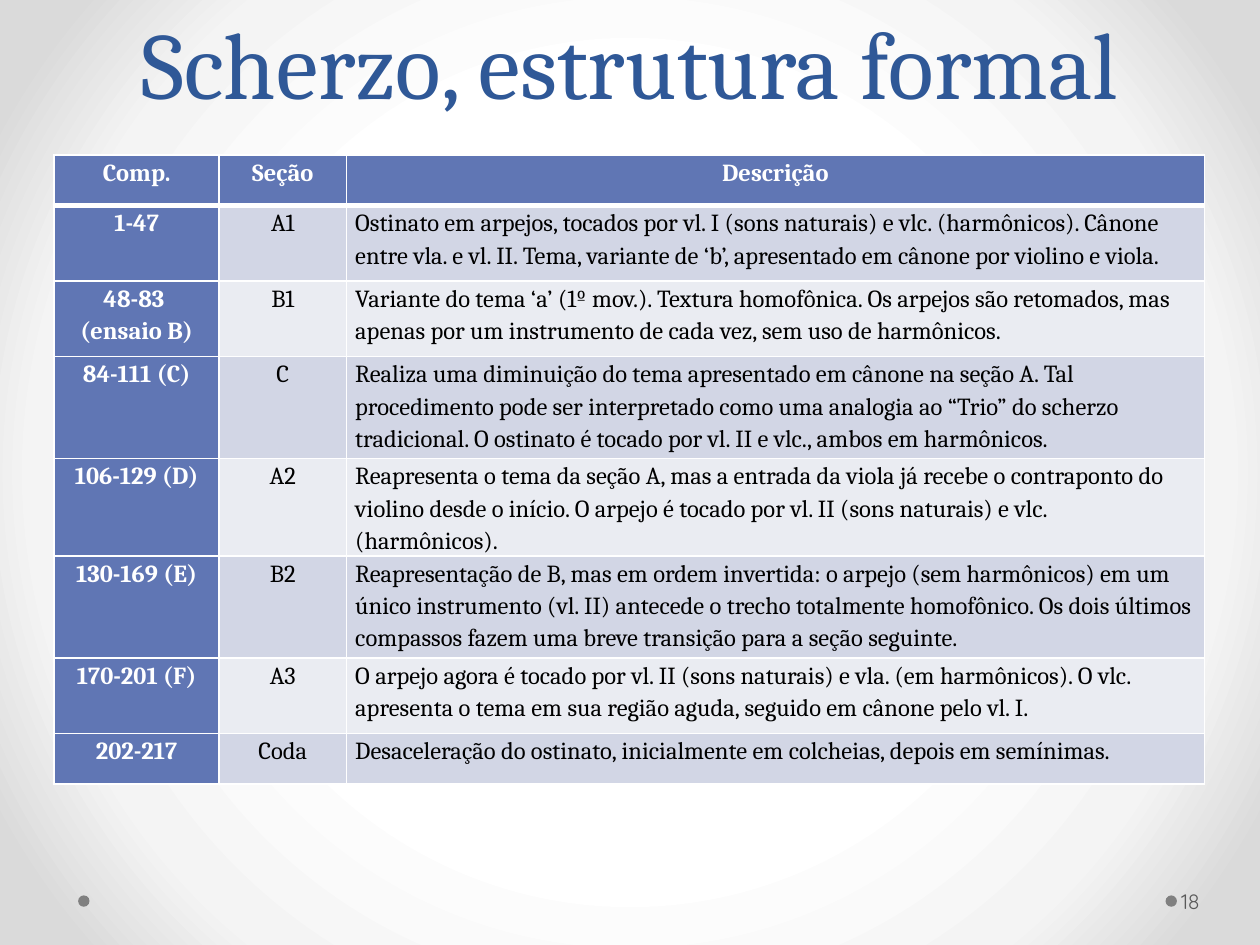
import pptx
import pptx.dml.color
import pptx.enum.shapes
import pptx.enum.text
import pptx.oxml
import pptx.oxml.ns
import pptx.util

WIDTH, HEIGHT = pptx.util.Inches(10), pptx.util.Inches(7.5)
FONT = "Cambria"
COLORS = {
    "title": "2F5897",
    "header": "6076B4",
    "odd_row": "D2D6E5",
    "even_row": "EAECF2",
    "white": "FFFFFF",
    "black": "000000",
    "dot": "808080",
    "number": "595959",
}
BACKGROUND_STOPS = [(50, "FFFFFF"), (76, "F4F4F4"), (92, "DADADA")]

# Regions as shares of the slide: left, top, width, height
TITLE_BOX = (0.05, 0, 0.9, 0.132)
TABLE_BOX = (0.043, 0.164, 0.913, 0.724)
FOOTER_BOX = (0.062, 0.927, 0.933, 0.053)

COLUMN_WIDTHS = [1.31, 1.01, 6.81]
ROW_HEIGHTS = [0.4, 0.6, 0.6, 0.81, 0.6, 0.81, 0.6, 0.4]
ROWS = [
    ("Comp.", "Seção", "Descrição"),
    ("1-47", "A1",
     "Ostinato em arpejos, tocados por vl. I (sons naturais) e vlc. (harmônicos). "
     "Cânone entre vla. e vl. II. Tema, variante de ‘b’, apresentado em cânone por "
     "violino e viola."),
    ("48-83 \n(ensaio B)", "B1",
     "Variante do tema ‘a’ (1º mov.). Textura homofônica. Os arpejos são retomados, "
     "mas apenas por um instrumento de cada vez, sem uso de harmônicos."),
    ("84-111 (C)", "C",
     "Realiza uma diminuição do tema apresentado em cânone na seção A. Tal "
     "procedimento pode ser interpretado como uma analogia ao “Trio” do scherzo "
     "tradicional. O ostinato é tocado por vl. II e vlc., ambos em harmônicos."),
    ("106-129 (D)", "A2",
     "Reapresenta o tema da seção A, mas a entrada da viola já recebe o contraponto "
     "do violino desde o início. O arpejo é tocado por vl. II (sons naturais) e vlc. "
     "(harmônicos)."),
    ("130-169 (E)", "B2",
     "Reapresentação de B, mas em ordem invertida: o arpejo (sem harmônicos) em um "
     "único instrumento (vl. II) antecede o trecho totalmente homofônico. Os dois "
     "últimos compassos fazem uma breve transição para a seção seguinte."),
    ("170-201 (F)", "A3",
     "O arpejo agora é tocado por vl. II (sons naturais) e vla. (em harmônicos). O "
     "vlc. apresenta o tema em sua região aguda, seguido em cânone pelo vl. I."),
    ("202-217", "Coda",
     "Desaceleração do ostinato, inicialmente em colcheias, depois em semínimas."),
]


def color(name):
    return pptx.dml.color.RGBColor.from_string(COLORS[name])


def to_lengths(box):
    return [int(share * side) for share, side in zip(box, (WIDTH, HEIGHT) * 2)]


def set_font(paragraph, size, color_name, name=FONT, bold=False):
    font = paragraph.font
    font.name, font.size, font.bold = name, pptx.util.Pt(size), bold
    font.color.rgb = color(color_name)


def set_background(slide):
    """Radial gradient, light in the middle."""
    slide.background.fill.solid()
    properties = slide.background._cSld.bg.bgPr
    stops = "".join(
        f'<a:gs pos="{position * 1000}"><a:srgbClr val="{value}"/></a:gs>'
        for position, value in BACKGROUND_STOPS
    )
    gradient = pptx.oxml.parse_xml(
        f'<a:gradFill {pptx.oxml.ns.nsdecls("a")} rotWithShape="1">'
        f'<a:gsLst>{stops}</a:gsLst><a:path path="circle">'
        '<a:fillToRect l="50000" t="50000" r="50000" b="50000"/></a:path></a:gradFill>'
    )
    properties.replace(properties[0], gradient)


def add_title(slide, box):
    title = slide.shapes.title
    title.left, title.top, title.width, title.height = to_lengths(box)
    frame = title.text_frame
    frame.text = "Scherzo, estrutura formal"
    frame.auto_size = pptx.enum.text.MSO_AUTO_SIZE.NONE
    frame.vertical_anchor = pptx.enum.text.MSO_ANCHOR.BOTTOM
    paragraph = frame.paragraphs[0]
    paragraph.alignment = pptx.enum.text.PP_ALIGN.CENTER
    paragraph.line_spacing = pptx.util.Pt(58)
    set_font(paragraph, 54, "title")


def set_borders(cell, bottom_width, top_width):
    properties = cell._tc.get_or_add_tcPr()
    widths = {"lnL": 1, "lnR": 1, "lnT": top_width, "lnB": bottom_width}
    for tag, width in widths.items():
        properties.append(pptx.oxml.parse_xml(
            f'<a:{tag} {pptx.oxml.ns.nsdecls("a")} w="{pptx.util.Pt(width)}">'
            f'<a:solidFill><a:srgbClr val="{COLORS["white"]}"/></a:solidFill></a:{tag}>'
        ))


def format_cell(cell, text, row, column):
    is_heading = row == 0 or column == 0
    set_borders(cell, 3 if row == 0 else 1, 3 if row == 1 else 1)
    cell.fill.solid()
    band = "odd_row" if row % 2 else "even_row"
    cell.fill.fore_color.rgb = color("header" if is_heading else band)
    cell.margin_left = cell.margin_right = pptx.util.Inches(0.07)
    cell.margin_top = cell.margin_bottom = 0
    cell.text = text
    is_description = row > 0 and column == 2
    align = pptx.enum.text.PP_ALIGN
    for paragraph in cell.text_frame.paragraphs:
        paragraph.alignment = align.LEFT if is_description else align.CENTER
        paragraph.line_spacing = 1.15
        set_font(paragraph, 14, "white" if is_heading else "black", bold=is_heading)


def add_sections_table(slide, box):
    frame = slide.shapes.add_table(len(ROWS), len(COLUMN_WIDTHS), *to_lengths(box))
    table = frame.table
    table.first_row = table.horz_banding = False
    for column, width in zip(table.columns, COLUMN_WIDTHS):
        column.width = pptx.util.Inches(width)
    for row, height in zip(table.rows, ROW_HEIGHTS):
        row.height = pptx.util.Inches(height)
    for row, texts in enumerate(ROWS):
        for column, text in enumerate(texts):
            format_cell(table.cell(row, column), text, row, column)


def add_footer(slide, box):
    left, top, width, height = to_lengths(box)
    # Dots at the left end and before the page number
    diameter = pptx.util.Inches(0.09)
    for share in (0, 0.925):
        dot = slide.shapes.add_shape(
            pptx.enum.shapes.MSO_SHAPE.OVAL,
            left + int(share * width), top + (height - diameter) // 2, diameter, diameter)
        dot.shadow.inherit = False
        dot.fill.solid()
        dot.fill.fore_color.rgb = color("dot")
        dot.line.fill.background()
    # Page number
    number_width = int(0.065 * width)
    number = slide.shapes.add_textbox(
        left + width - number_width, top, number_width, height)
    frame = number.text_frame
    frame.word_wrap = True
    frame.vertical_anchor = pptx.enum.text.MSO_ANCHOR.MIDDLE
    frame.margin_left = pptx.util.Inches(0.03)
    frame.margin_right = pptx.util.Inches(0.05)
    frame.text = "18"
    set_font(frame.paragraphs[0], 12, "number", name="Quicksand")


def main():
    presentation = pptx.Presentation()
    presentation.slide_width, presentation.slide_height = WIDTH, HEIGHT
    slide = presentation.slides.add_slide(presentation.slide_layouts[5])
    set_background(slide)
    add_title(slide, TITLE_BOX)
    add_sections_table(slide, TABLE_BOX)
    add_footer(slide, FOOTER_BOX)
    presentation.save("out.pptx")


if __name__ == "__main__":
    main()
